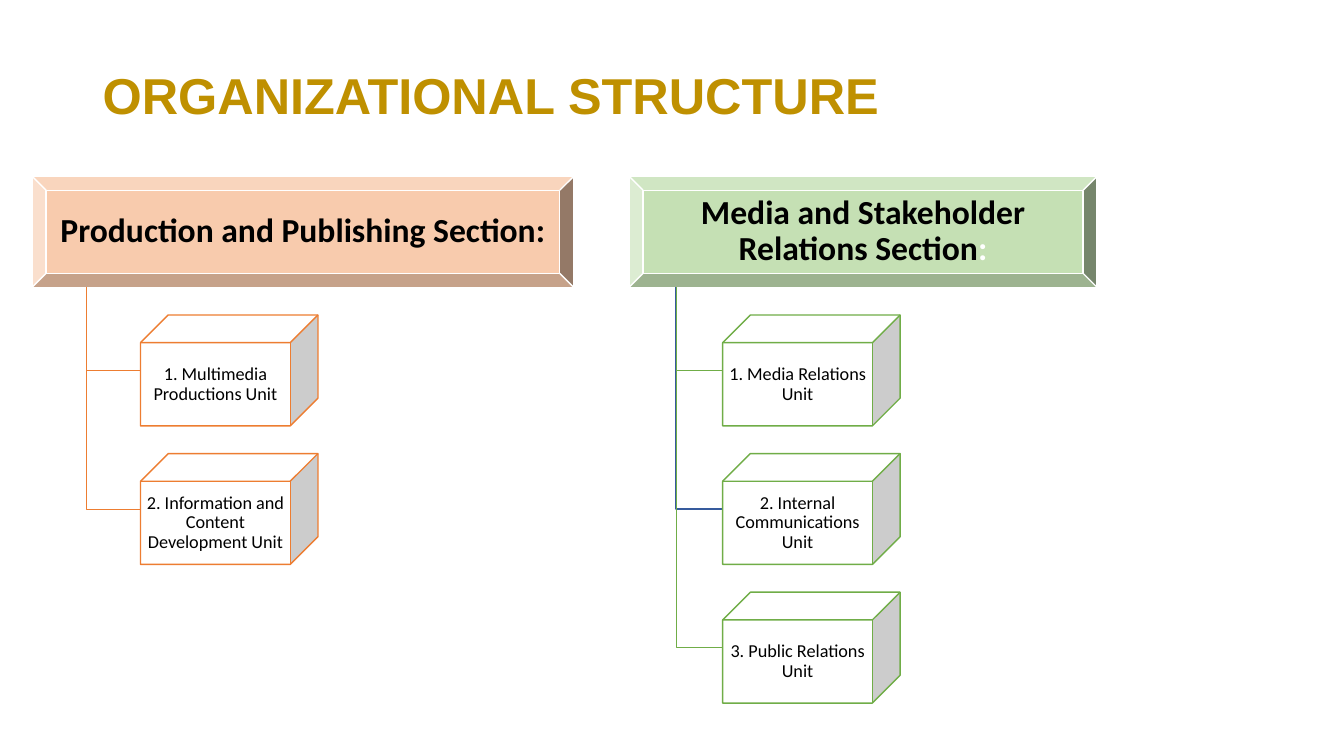
from pptx import Presentation
from pptx.dml.color import RGBColor
from pptx.enum.shapes import MSO_SHAPE as Shape
from pptx.enum.text import MSO_ANCHOR as Anchor, PP_ALIGN as Align
from pptx.util import Inches, Pt

COLORS = {
    "gold": "BF9000",
    "black": "000000",
    "white": "FFFFFF",
    "orange": "ED7D31",
    "peach": "F8CBAD",
    "green": "70AD47",
    "mint": "C5E0B4",
    "blue": "365B9D",
}

SECTION_TOP, BOX_HEIGHT = 1.75, 1.1
UNIT_WIDTH = 1.76
UNIT_STEP = 1.25 * BOX_HEIGHT

# Each section: left, width, fill, accent, heading runs, units with elbow colour and width
SECTIONS = [
    (0.32, 5.37, "peach", "orange",
     [("Production and Publishing Section:", "black")],
     [("1. Multimedia Productions Unit", "orange", 0.5),
      ("2. Information and Content Development Unit", "orange", 0.5)]),
    (6.24, 4.64, "mint", "green",
     [("Media and Stakeholder Relations Section", "black"), (":", "white")],
     [("1. Media Relations Unit", "green", 0.5),
      ("2. Internal Communications Unit", "blue", 1),
      ("3. Public Relations Unit", "green", 0.5)]),
]


def rgb(name):
    return RGBColor.from_string(COLORS[name])


def write_text(shape, runs, size, font="Calibri", bold=False,
               align=Align.CENTER, insets=(0.05, 0.03)):
    """Fill a shape with one paragraph of (text, colour) runs."""
    frame = shape.text_frame
    frame.word_wrap = True
    frame.vertical_anchor = Anchor.MIDDLE
    frame.margin_left = frame.margin_right = Inches(insets[0])
    frame.margin_top = frame.margin_bottom = Inches(insets[1])
    paragraph = frame.paragraphs[0]
    paragraph.alignment = align
    paragraph.line_spacing = 0.9
    for text, color in runs:
        run = paragraph.add_run()
        run.text = text
        run.font.name = font
        run.font.size = Pt(size)
        run.font.bold = bold
        run.font.color.rgb = rgb(color)


class StructureChart:
    def __init__(self, slide):
        self.slide = slide

    def title(self, text):
        box = self.slide.shapes.add_textbox(
            Inches(0.92), Inches(0.37), Inches(9.97), Inches(1.21))
        write_text(box, [(text, "gold")], 36, font="Arial", bold=True,
                   align=Align.LEFT, insets=(0.1, 0.05))

    def block(self, kind, left, top, width, fill, line):
        shape = self.slide.shapes.add_shape(
            kind, Inches(left), Inches(top), Inches(width), Inches(BOX_HEIGHT))
        shape.shadow.inherit = False
        shape.fill.solid()
        shape.fill.fore_color.rgb = rgb(fill)
        shape.line.color.rgb = rgb(line)
        shape.line.width = Pt(1)
        return shape

    def elbow(self, start, end, color, width):
        """Draw an open line that runs down, then right."""
        (x1, y1), (x2, y2) = start, end
        builder = self.slide.shapes.build_freeform(Inches(x1), Inches(y1))
        builder.add_line_segments(
            [(Inches(x1), Inches(y2)), (Inches(x2), Inches(y2))], close=False)
        shape = builder.convert_to_shape()
        shape.shadow.inherit = False
        shape.fill.background()
        shape.line.color.rgb = rgb(color)
        shape.line.width = Pt(width)

    def section(self, left, width, fill, accent, heading, units):
        header = self.block(Shape.BEVEL, left, SECTION_TOP, width, fill, "white")
        write_text(header, heading, 24, bold=True)
        stem = (left + 0.1 * width, SECTION_TOP + BOX_HEIGHT)
        unit_left = left + 0.2 * width
        for index, (name, elbow_color, elbow_width) in enumerate(units):
            top = SECTION_TOP + (index + 1) * UNIT_STEP
            self.elbow(stem, (unit_left, top + BOX_HEIGHT / 2),
                       elbow_color, elbow_width)
            cube = self.block(Shape.CUBE, unit_left, top, UNIT_WIDTH,
                              "white", accent)
            write_text(cube, [(name, "black")], 13, insets=(0.03, 0.02))


def main():
    presentation = Presentation()
    presentation.slide_width = Inches(13.33)
    presentation.slide_height = Inches(7.5)
    slide = presentation.slides.add_slide(presentation.slide_layouts[6])
    chart = StructureChart(slide)
    chart.title("ORGANIZATIONAL STRUCTURE")
    for section in SECTIONS:
        chart.section(*section)
    presentation.save("out.pptx")


if __name__ == "__main__":
    main()
